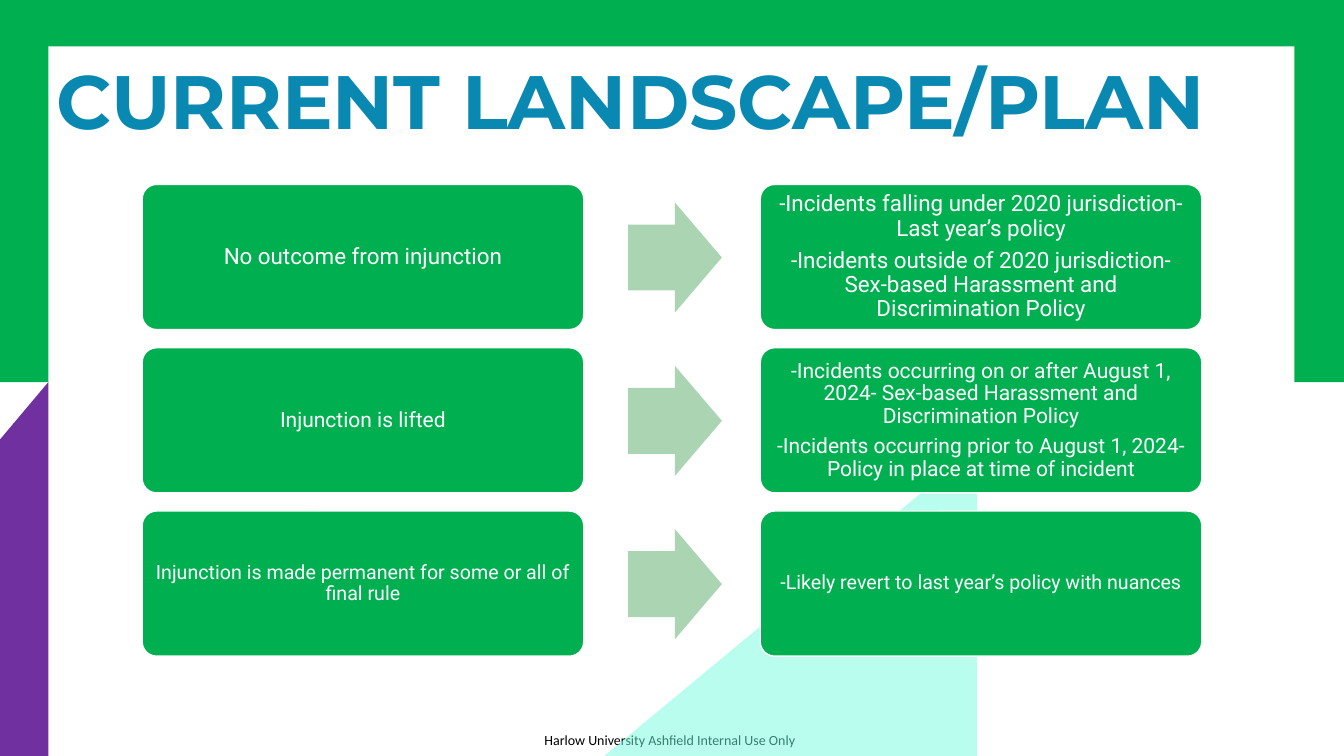
from lxml import etree
from pptx import Presentation
from pptx.dml.color import RGBColor
from pptx.enum import shapes, text
from pptx.oxml import ns
from pptx.util import Inches, Pt

GREEN = "00B050"
WHITE = "FFFFFF"
SCENARIOS = [
    (16, "No outcome from injunction", [
        "-Incidents falling under 2020 jurisdiction- Last year’s policy",
        "-Incidents outside of 2020 jurisdiction- "
        "Sex-based Harassment and Discrimination Policy",
    ]),
    (15, "Injunction is lifted", [
        "-Incidents occurring on or after August 1, 2024- "
        "Sex-based Harassment and Discrimination Policy",
        "-Incidents occurring prior to August 1, 2024- "
        "Policy in place at time of incident",
    ]),
    (14, "Injunction is made permanent for some or all of final rule", [
        "-Likely revert to last year’s policy with nuances",
    ]),
]


def color(hex_code):
    return RGBColor.from_string(hex_code)


def paint(shape, fill, line=None):
    shape.shadow.inherit = False
    shape.fill.solid()
    shape.fill.fore_color.rgb = color(fill)
    if line:
        shape.line.color.rgb = color(line)
        shape.line.width = Pt(1)
    else:
        shape.line.fill.background()


def add_preset(slide, kind, box, fill, line=None, adjustments=()):
    shape = slide.shapes.add_shape(kind, *map(Inches, box))
    for index, value in enumerate(adjustments):
        shape.adjustments[index] = value
    paint(shape, fill, line)
    return shape


def add_polygon(slide, points, fill, opacity=None):
    corners = [(Inches(x), Inches(y)) for x, y in points]
    builder = slide.shapes.build_freeform(*corners[0])
    builder.add_line_segments(corners[1:], close=True)
    polygon = builder.convert_to_shape()
    paint(polygon, fill)
    if opacity:
        shade = polygon.fill._xPr.find(".//" + ns.qn("a:srgbClr"))
        etree.SubElement(shade, ns.qn("a:alpha"), val=str(opacity * 1000))


def write(frame, paragraphs, *, size, font, ink, bold=False, align=None,
          anchor=None, margins=(0.1, 0.05), spacing=None, after=None, wrap=True):
    frame.word_wrap = wrap
    frame.margin_left = frame.margin_right = Inches(margins[0])
    frame.margin_top = frame.margin_bottom = Inches(margins[1])
    if anchor is not None:
        frame.vertical_anchor = anchor
    for index, content in enumerate(paragraphs):
        paragraph = frame.add_paragraph() if index else frame.paragraphs[0]
        paragraph.alignment = align
        paragraph.line_spacing = spacing
        paragraph.space_after = after
        run = paragraph.add_run()
        run.text = content
        run.font.size = Pt(size)
        run.font.name = font
        run.font.bold = bold
        run.font.color.rgb = color(ink)


def add_label(slide, box, content, **style):
    label = slide.shapes.add_textbox(*map(Inches, box))
    write(label.text_frame, [content], **style)


def add_card(slide, left, top, paragraphs, size):
    card = add_preset(slide, shapes.MSO_SHAPE.ROUNDED_RECTANGLE,
                      (left, top, 4.38, 1.44), GREEN, WHITE, [0.1])
    write(card.text_frame, paragraphs, size=size, font="Roboto", ink=WHITE,
          align=text.PP_ALIGN.CENTER, anchor=text.MSO_ANCHOR.MIDDLE,
          margins=(0.07, 0.07), spacing=0.9, after=Pt(size * 0.35))


def add_scenario(slide, top, size, condition, responses):
    add_card(slide, 1.41, top, [condition], size)
    add_preset(slide, shapes.MSO_SHAPE.RIGHT_ARROW,
               (6.23, top + 0.18, 0.93, 1.09), "ABD4B3", adjustments=[0.6, 0.5])
    add_card(slide, 7.54, top, responses, size)


def add_backdrop(slide):
    add_label(slide, (5.4, 7.26, 2.57, 0.17),
              "Harlow University Ashfield Internal Use Only",
              size=10, font="Calibri", ink="000000", margins=(0, 0), wrap=False)
    rectangle = shapes.MSO_SHAPE.RECTANGLE
    add_preset(slide, rectangle, (-0.03, 0, 13.36, 3.79), GREEN)
    add_preset(slide, rectangle, (0.48, 0.46, 12.36, 6.59), WHITE)
    add_polygon(slide, [(5.98, 7.51), (9.69, 4.43), (9.69, 7.51)], "72FDDF", 50)
    add_polygon(slide, [(0.48, 3.79), (0.48, 7.5), (0, 7.5), (0, 4.36)], "7030A0")


def main():
    deck = Presentation()
    deck.slide_width = Inches(13.33)
    deck.slide_height = Inches(7.5)
    slide = deck.slides.add_slide(deck.slide_layouts[6])
    add_backdrop(slide)
    add_label(slide, (0.46, 0.49, 12.4, 1.01), "CURRENT LANDSCAPE/PLAN",
              size=54, font="Montserrat", ink="0989B1", bold=True)
    for row, (size, condition, responses) in enumerate(SCENARIOS):
        add_scenario(slide, 1.83 + 1.62 * row, size, condition, responses)
    deck.save("out.pptx")


if __name__ == "__main__":
    main()
